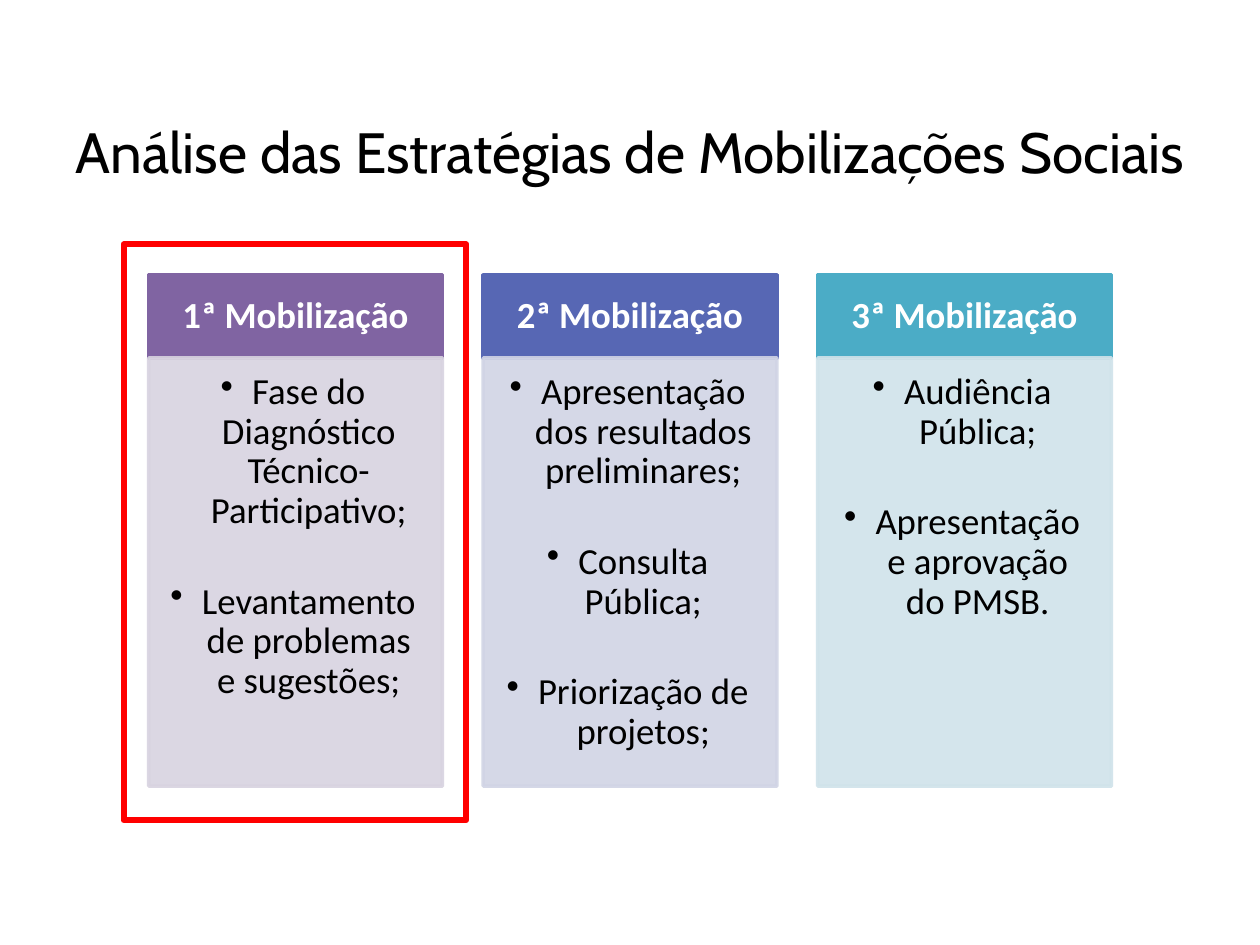
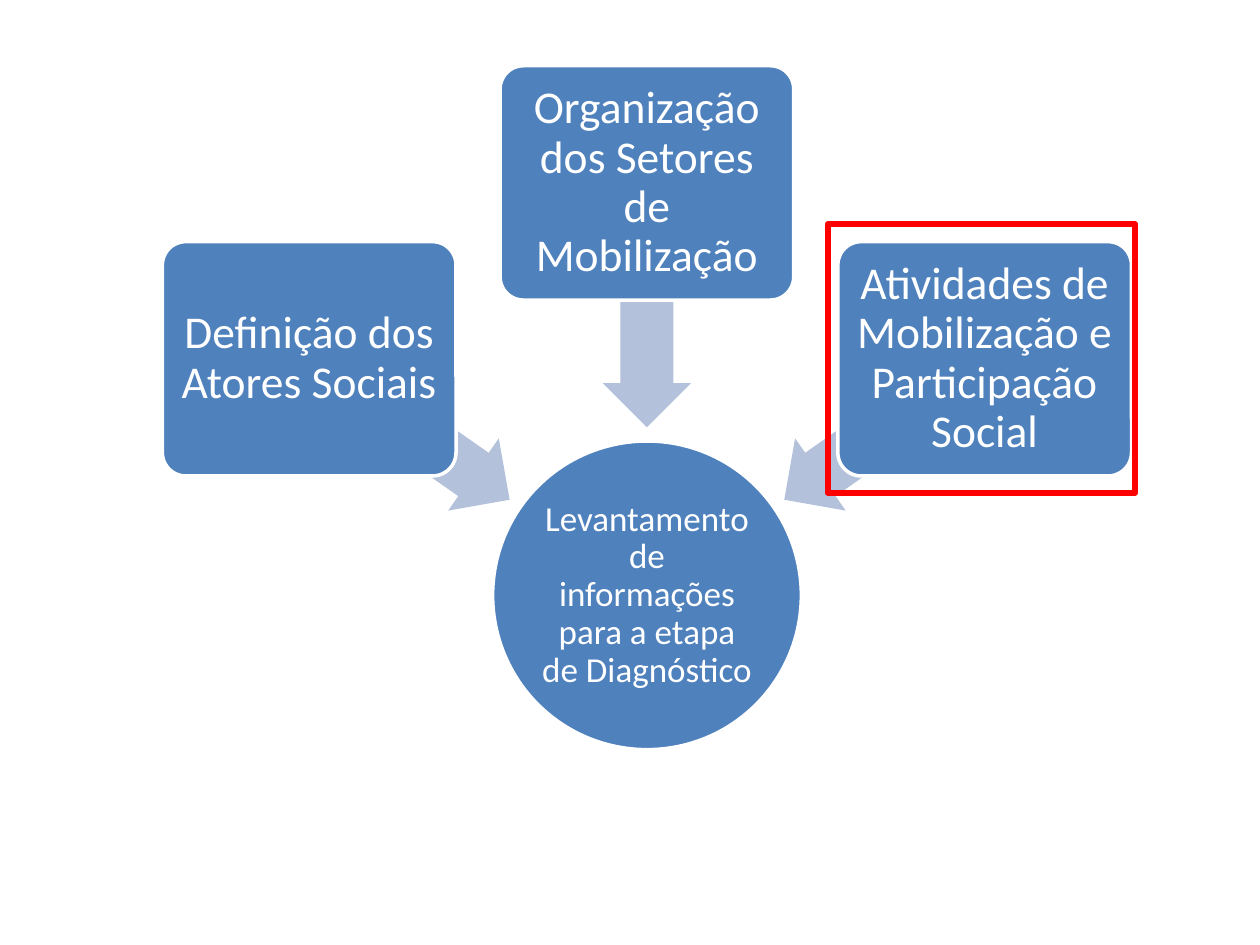
"""Builds two slides on the social mobilization strategy."""
from dataclasses import dataclass

from lxml.etree import SubElement
from pptx import Presentation
from pptx.dml.color import RGBColor
from pptx.enum.shapes import MSO_SHAPE as Shape
from pptx.enum.text import MSO_ANCHOR as Anchor, MSO_AUTO_SIZE as AutoSize, PP_ALIGN as Align
from pptx.oxml.ns import qn
from pptx.util import Pt

TITLE = "Análise das Estratégias de Mobilizações Sociais"
PHASES = [
    ("1ª Mobilização", "8064A2", "D8D3E0",
     ["Fase do Diagnóstico Técnico- Participativo;", "Levantamento de problemas e sugestões;"]),
    ("2ª Mobilização", "5767B4", "D1D4E5",
     ["Apresentação dos resultados preliminares;", "Consulta Pública;", "Priorização de projetos;"]),
    ("3ª Mobilização", "4BACC6", "D0E3EA",
     ["Audiência Pública;", "Apresentação e aprovação do PMSB."]),
]
GOAL = "Levantamento de informações para a etapa de Diagnóstico"
INPUTS = [
    ("Definição dos Atores Sociais", -1, 138.1, 245.5, 215),
    ("Organização dos Setores de Mobilização", 0, 37.6, 174.3, 270),
    ("Atividades de Mobilização e Participação Social", 1, 138.1, 245.5, 325),
]


@dataclass(frozen=True)
class Theme:
    """Colours, fonts and type sizes."""
    title_font: str = "Cabin"
    text_font: str = "Calibri"
    black: str = "000000"
    white: str = "FFFFFF"
    blue: str = "4F81BD"
    arrow: str = "B3C1DB"
    highlight: str = "FF0000"
    title_size: float = 32.4
    column_size: float = 21
    input_size: float = 26
    goal_size: float = 20


THEME = Theme()


def style_font(font, name, size, color, bold=False):
    """Format a font."""
    for key, value in dict(name=name, size=Pt(size), bold=bold).items():
        setattr(font, key, value)
    font.color.rgb = RGBColor.from_string(color)


def set_frame(frame, insets, anchor):
    """Set the wrapping, anchor and left, top, right, bottom insets."""
    values = dict(zip(("margin_left", "margin_top", "margin_right", "margin_bottom"), map(Pt, insets)))
    values.update(word_wrap=True, auto_size=AutoSize.NONE, vertical_anchor=anchor)
    for key, value in values.items():
        setattr(frame, key, value)


def add_box(page, kind, place, fill=None, line=None, line_width=2, opacity=100):
    """Draw a shape without a shadow."""
    box = page.shapes.add_shape(kind, *map(Pt, place))
    box.shadow.inherit = False
    for paint, color in ((box.fill, fill), (box.line.fill, line)):
        if color is None:
            paint.background()
            continue
        paint.solid()
        paint.fore_color.rgb = RGBColor.from_string(color)
    if line:
        box.line.width = Pt(line_width)
    if opacity < 100:
        for tint in box._element.spPr.iter(qn("a:srgbClr")):
            SubElement(tint, qn("a:alpha"), val=str(opacity * 1000))
    return box


def write(box, lines, size, color, insets, anchor=Anchor.MIDDLE, bold=False, bullets=False):
    """Write centred paragraphs, optionally as a bulleted list."""
    frame = box.text_frame
    set_frame(frame, insets, anchor)
    for index, line in enumerate(lines):
        para = frame.add_paragraph() if index else frame.paragraphs[0]
        if bullets:
            properties = para._p.get_or_add_pPr()
            properties.set("marL", str(Pt(18)))
            properties.set("indent", str(-Pt(18)))
            SubElement(properties, qn("a:buChar"), char="•")
        para.alignment = Align.CENTER
        para.line_spacing = 0.9
        if index < len(lines) - 1:
            para.space_after = Pt(29)
        span = para.add_run()
        span.text = line
        style_font(span.font, THEME.text_font, size, color, bold)


def add_highlight(page, place):
    """Frame the current step."""
    add_box(page, Shape.RECTANGLE, place, line=THEME.highlight, line_width=3.5)


def build_phases(deck):
    """Show the three mobilization phases as columns."""
    page = deck.slides.add_slide(deck.slide_layouts[5])
    title = page.shapes.title
    for key, value in dict(left=36, top=60.5, width=648, height=90).items():
        setattr(title, key, Pt(value))
    set_frame(title.text_frame, (0, 3.6, 0, 42.6), Anchor.MIDDLE)
    title.text_frame.text = TITLE
    para = title.text_frame.paragraphs[0]
    para.alignment = Align.CENTER
    style_font(para.runs[0].font, THEME.title_font, THEME.title_size, THEME.black)

    left, top, width, pitch = 85, 157, 167.8, 191.15
    header_height, list_height = 47.5, 244.8
    for index, (name, color, tint, items) in enumerate(PHASES):
        x = left + index * pitch
        header = add_box(page, Shape.RECTANGLE, (x, top, width, header_height), color, color)
        write(header, [name], THEME.column_size, THEME.white, (11.5, 6.5, 11.5, 6.5), bold=True)
        panel = add_box(page, Shape.RECTANGLE, (x, top + header_height, width, list_height),
                        tint, tint, opacity=90)
        write(panel, items, THEME.column_size, THEME.black, (8.6, 8.6, 11.5, 13),
              Anchor.TOP, bullets=True)
    add_highlight(page, (70.6, 139.7, 195.8, 329))


def build_inputs(deck):
    """Show three inputs pointing at the goal."""
    page = deck.slides.add_slide(deck.slide_layouts[6])
    center, diameter = 369.7, 176.4
    width, height, pitch = 167.8, 133.9, 193
    arrow_width, arrow_height, arrow_pitch = 139.7, 50.4, 135.7
    goal = add_box(page, Shape.OVAL, (center - diameter / 2, 252, diameter, diameter),
                   THEME.blue, THEME.white)
    write(goal, [GOAL], THEME.goal_size, THEME.white, (0.9,) * 4)
    for text, side, top, arrow_middle, angle in INPUTS:
        arrow = add_box(page, Shape.LEFT_ARROW,
                        (center + side * arrow_pitch - arrow_width / 2,
                         arrow_middle - arrow_height / 2, arrow_width, arrow_height), THEME.arrow)
        arrow.adjustments[0], arrow.adjustments[1] = 0.6, 0.5
        arrow.rotation = angle
        box = add_box(page, Shape.ROUNDED_RECTANGLE,
                      (center + side * pitch - width / 2, top, width, height),
                      THEME.blue, THEME.white)
        box.adjustments[0] = 0.1
        write(box, [text], THEME.input_size, THEME.white, (3.6,) * 4)
    add_highlight(page, (473, 128.2, 175.7, 153.4))


def main():
    """Build and save the deck."""
    deck = Presentation()
    deck.slide_width, deck.slide_height = Pt(720), Pt(540)
    build_phases(deck)
    build_inputs(deck)
    deck.save("out.pptx")


if __name__ == "__main__":
    main()
